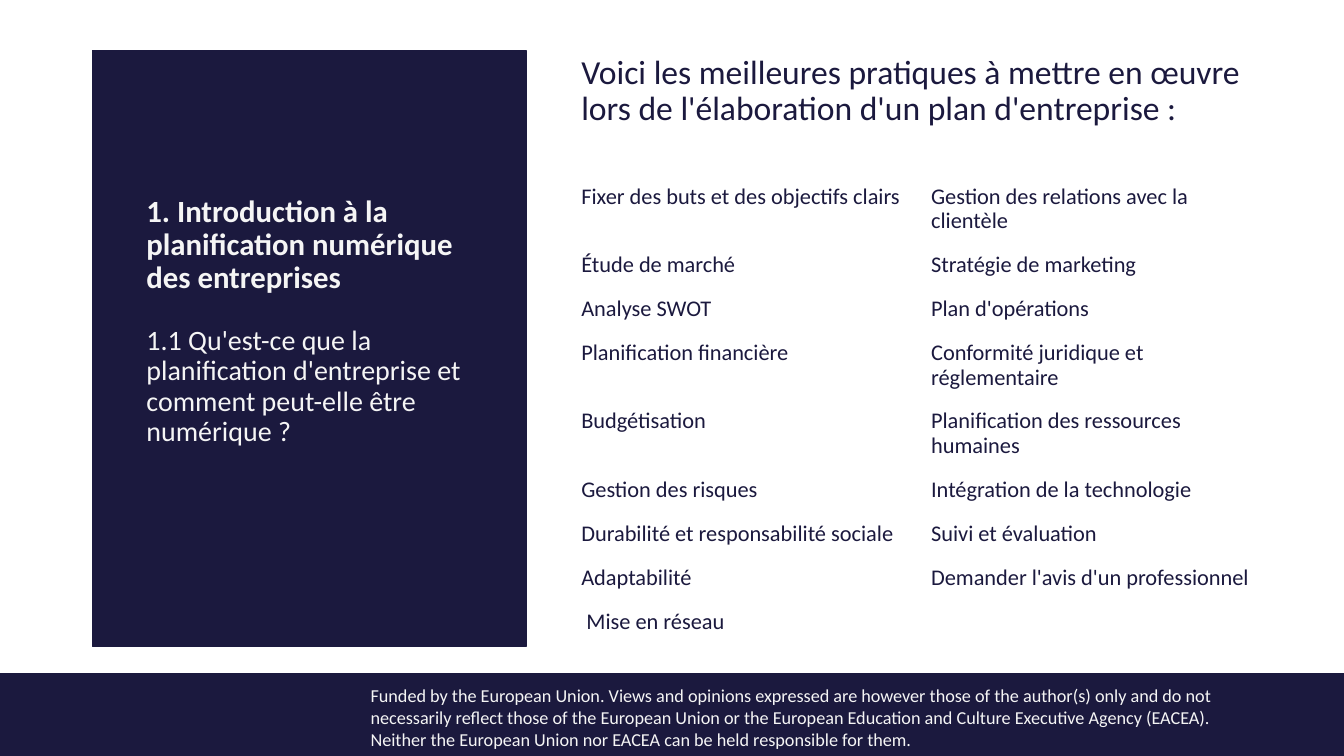
from pptx import Presentation
from pptx.dml.color import RGBColor
from pptx.enum import shapes, text
from pptx.util import Cm, Pt

COLORS = {"navy": "1B193E", "light": "F5F5F5"}
INSET = 0.25
INDENT = 0.13

TITLE = "1. Introduction à la planification numérique des entreprises"
TOPIC = ("1.1 Qu'est-ce que la planification d'entreprise et comment "
         "peut-elle être numérique ?")
LEAD = ("Voici les meilleures pratiques à mettre en œuvre lors de "
        "l'élaboration d'un plan d'entreprise :")
NOTICE = ("Funded by the European Union. Views and opinions expressed are "
          "however those of the author(s) only and do not necessarily reflect "
          "those of the European Union or the European Education and Culture "
          "Executive Agency (EACEA). Neither the European Union nor EACEA can "
          "be held responsible for them.")
ROWS = [
    ("Fixer des buts et des objectifs clairs",
     "Gestion des relations avec la clientèle"),
    ("Étude de marché", "Stratégie de marketing"),
    ("Analyse SWOT", "Plan d'opérations"),
    ("Planification financière", "Conformité juridique et réglementaire"),
    ("Budgétisation", "Planification des ressources humaines"),
    ("Gestion des risques", "Intégration de la technologie"),
    ("Durabilité et responsabilité sociale", "Suivi et évaluation"),
    ("Adaptabilité", "Demander l'avis d'un professionnel"),
    ("Mise en réseau", ""),
]


def paint(name):
    return RGBColor.from_string(COLORS[name])


def apply(item, values):
    for key, value in values.items():
        setattr(item, key, value)


def write(frame, words, size, color, bold=False, space=0.9):
    para = frame.paragraphs[0]
    para.line_spacing = space
    run = para.add_run()
    run.text = words
    apply(run.font, {"name": "Calibri", "size": Pt(size), "bold": bold})
    run.font.color.rgb = paint(color)


def add_panel(slide, box):
    panel = slide.shapes.add_shape(
        shapes.MSO_SHAPE.RECTANGLE, *map(Cm, box))
    panel.shadow.inherit = False
    panel.fill.solid()
    panel.fill.fore_color.rgb = paint("navy")
    panel.line.color.rgb = paint("navy")
    panel.line.width = Pt(1)


def add_text(slide, box, words, size, color,
             anchor=text.MSO_ANCHOR.TOP, **style):
    frame = slide.shapes.add_textbox(*map(Cm, box)).text_frame
    apply(frame, {"word_wrap": True, "vertical_anchor": anchor})
    write(frame, words, size, color, **style)


def add_grid(slide, box, rows):
    grid = slide.shapes.add_table(
        len(rows), len(rows[0]), *map(Cm, box)).table
    apply(grid, {"first_row": False, "horz_banding": False})
    for i, row in enumerate(rows):
        grid.rows[i].height = Cm(1.6 if i == 0 else 1.07)
        for j, words in enumerate(row):
            cell = grid.cell(i, j)
            cell.fill.background()
            if words:
                for side in ("left", "top", "right", "bottom"):
                    setattr(cell, f"margin_{side}", Cm(INSET))
                write(cell.text_frame, words, 16, "navy")
    grid.cell(len(rows) - 1, 0).margin_left = Cm(INSET + INDENT)


def main():
    deck = Presentation()
    apply(deck, {"slide_width": Cm(33.87), "slide_height": Cm(19.05)})
    slide = deck.slides.add_slide(deck.slide_layouts[6])
    add_panel(slide, (2.33, 1.27, 10.93, 15.02))
    add_panel(slide, (0, 16.97, 33.87, 2.08))
    add_text(slide, (9.09, 17.12, 22.45, 1.93), NOTICE, 13, "light", space=1.0)
    add_text(slide, (3.44, 4.95, 8.71, 2.62), TITLE, 22, "light",
             text.MSO_ANCHOR.BOTTOM, bold=True)
    add_text(slide, (3.44, 8.1, 8.71, 7.14), TOPIC, 20, "light")
    add_text(slide, (14.4, 1.27, 17.15, 15.02), LEAD, 24, "navy")
    add_grid(slide, (14.4, 4.4, 17.63, 11.89), ROWS)
    deck.save("out.pptx")


if __name__ == "__main__":
    main()
